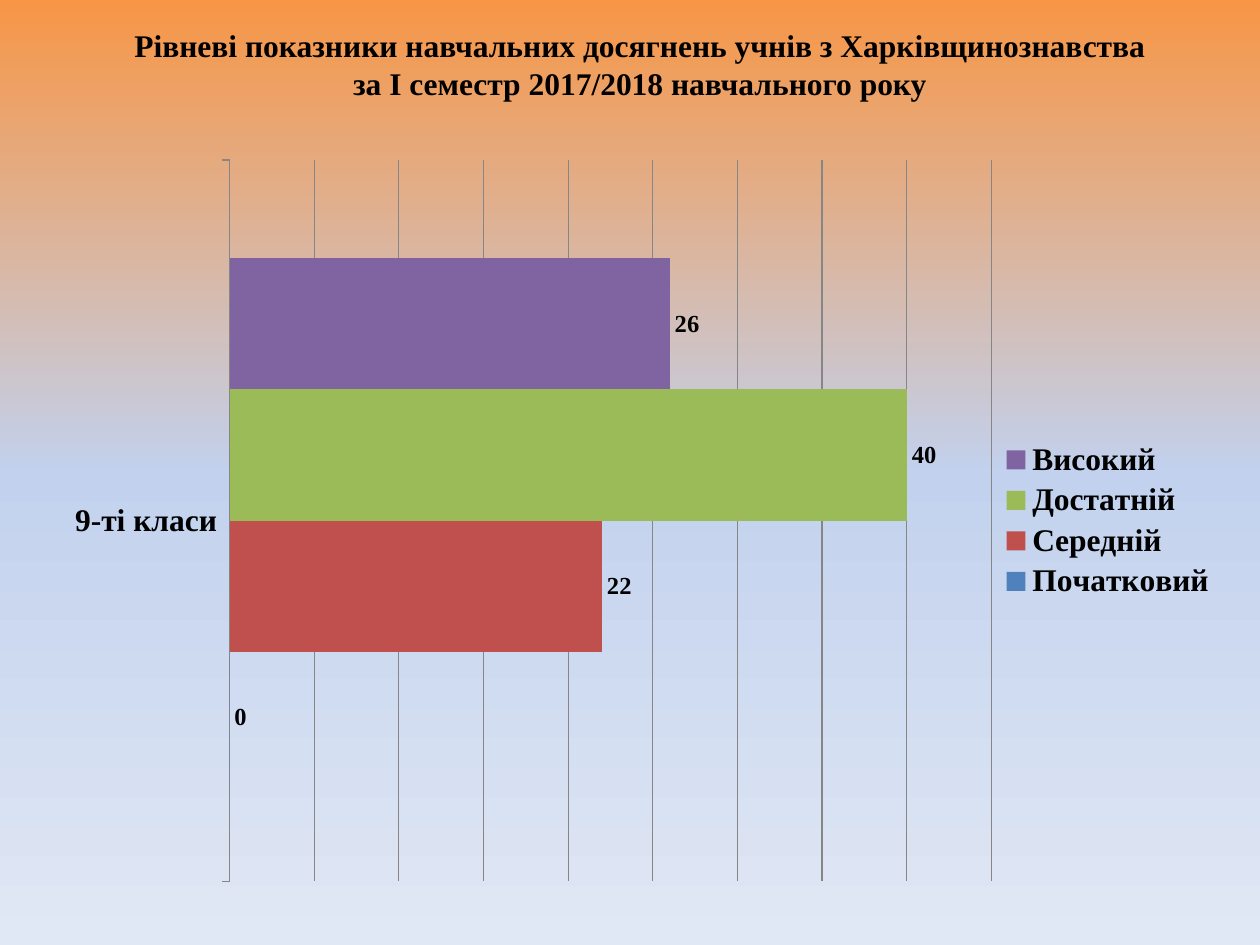
from copy import deepcopy

from lxml.etree import SubElement
from pptx import Presentation
from pptx.chart.data import CategoryChartData
from pptx.dml.color import RGBColor
from pptx.enum.chart import (XL_CHART_TYPE as ChartType, XL_LABEL_POSITION as LabelPlace,
                             XL_LEGEND_POSITION as LegendPlace, XL_TICK_MARK as Tick)
from pptx.enum.text import MSO_ANCHOR as Anchor, PP_ALIGN as Align
from pptx.oxml.ns import qn
from pptx.util import Inches, Pt

COLORS = {
    "text": "000000", "grid": "868686",
    "sky_top": "F79646", "sky_middle": "C2D1ED", "sky_bottom": "E1E8F5",
    "beginner": "4F81BD", "average": "C0504D", "sufficient": "9BBB59", "high": "8064A2",
}
FONT = "Times New Roman"
LEVELS = [
    ("Початковий", 0, "beginner"),
    ("Середній", 22, "average"),
    ("Достатній", 40, "sufficient"),
    ("Високий", 26, "high"),
]


def color(name):
    return RGBColor.from_string(COLORS[name])


def style_font(font, size=18, bold=True, name=FONT, ink="text"):
    font.size, font.bold, font.name = Pt(size), bold, name
    font.color.rgb = color(ink)


def write(frame, text, align=Align.CENTER, anchor=Anchor.MIDDLE, **style):
    frame.word_wrap = True
    frame.vertical_anchor = anchor
    frame.text = text
    for para in frame.paragraphs:
        para.alignment = align
        for span in para.runs:
            style_font(span.font, **style)


class SlideBuilder:
    """Places elements by shares of the slide's width and height."""

    def __init__(self, deck):
        self.width, self.height = deck.slide_width, deck.slide_height
        self.page = deck.slides.add_slide(deck.slide_layouts[5])

    def frame(self, left, top, width, height):
        return (round(left * self.width), round(top * self.height),
                round(width * self.width), round(height * self.height))

    def background(self, stops):
        fill = self.page.background.fill
        fill.gradient()
        fill.gradient_angle = 270
        stop_list = self.page.background._cSld.find(".//" + qn("a:gsLst"))
        while len(stop_list) < len(stops):
            stop_list.append(deepcopy(stop_list[0]))
        for stop, (position, name) in zip(fill.gradient_stops, stops):
            stop.position = position
            stop.color.rgb = color(name)

    def title(self, text, place, **style):
        box = self.page.shapes.title
        box.left, box.top, box.width, box.height = self.frame(*place)
        write(box.text_frame, text, **style)

    def bar_chart(self, category, levels, place, plot_place):
        data = CategoryChartData()
        data.categories = [category]
        for name, value, _ in levels:
            data.add_series(name, [value])
        chart = self.page.shapes.add_chart(
            ChartType.BAR_CLUSTERED, *self.frame(*place), data).chart
        style_font(chart.font, bold=False, name="Calibri")
        chart.has_title = False

        # Bars and their values
        plot = chart.plots[0]
        plot.gap_width, plot.overlap, plot.vary_by_categories = 150, 0, False
        for series, (_, _, ink) in zip(plot.series, levels):
            series.format.fill.solid()
            series.format.fill.fore_color.rgb = color(ink)
            labels = series.data_labels
            labels.show_value = True
            labels.position = LabelPlace.OUTSIDE_END
            style_font(labels.font, size=14)

        # Axes and grid
        rows, values = chart.category_axis, chart.value_axis
        rows.major_tick_mark = Tick.OUTSIDE
        style_font(rows.tick_labels.font)
        values.visible = False
        values.minimum_scale, values.maximum_scale, values.major_unit = 0, 45, 5
        values.has_major_gridlines = True
        for line in (rows.format.line, values.major_gridlines.format.line):
            line.color.rgb = color("grid")
            line.width = Pt(0.75)

        # Legend
        chart.has_legend = True
        chart.legend.position = LegendPlace.RIGHT
        chart.legend.include_in_layout = False
        style_font(chart.legend.font)
        self.place_plot(chart, plot_place)

    @staticmethod
    def place_plot(chart, place):
        area = chart._chartSpace.find(".//" + qn("c:plotArea"))
        layout = area.find(qn("c:layout"))
        if layout is None:
            layout = SubElement(area, qn("c:layout"))
            area.insert(0, layout)
        manual = SubElement(layout, qn("c:manualLayout"))
        settings = [("layoutTarget", "inner"), ("xMode", "edge"), ("yMode", "edge"),
                    *zip("xywh", place)]
        for tag, value in settings:
            SubElement(manual, qn("c:" + tag)).set("val", str(value))


def main():
    deck = Presentation()
    deck.slide_width, deck.slide_height = Inches(10), Inches(7.5)
    slide = SlideBuilder(deck)

    # Background
    slide.background([(0, "sky_top"), (0.5, "sky_middle"), (1, "sky_bottom")])

    # Heading
    slide.title("Рівневі показники навчальних досягнень учнів з Харківщинознавства\v"
                "за І семестр 2017/2018 навчального року",
                (0.047, 0.031, 0.922, 0.073))

    # Results by level
    slide.bar_chart("9-ті класи", LEVELS, (0.031, 0.145, 0.945, 0.812),
                    (0.16, 0.03, 0.64, 0.94))
    deck.save("out.pptx")


if __name__ == "__main__":
    main()
